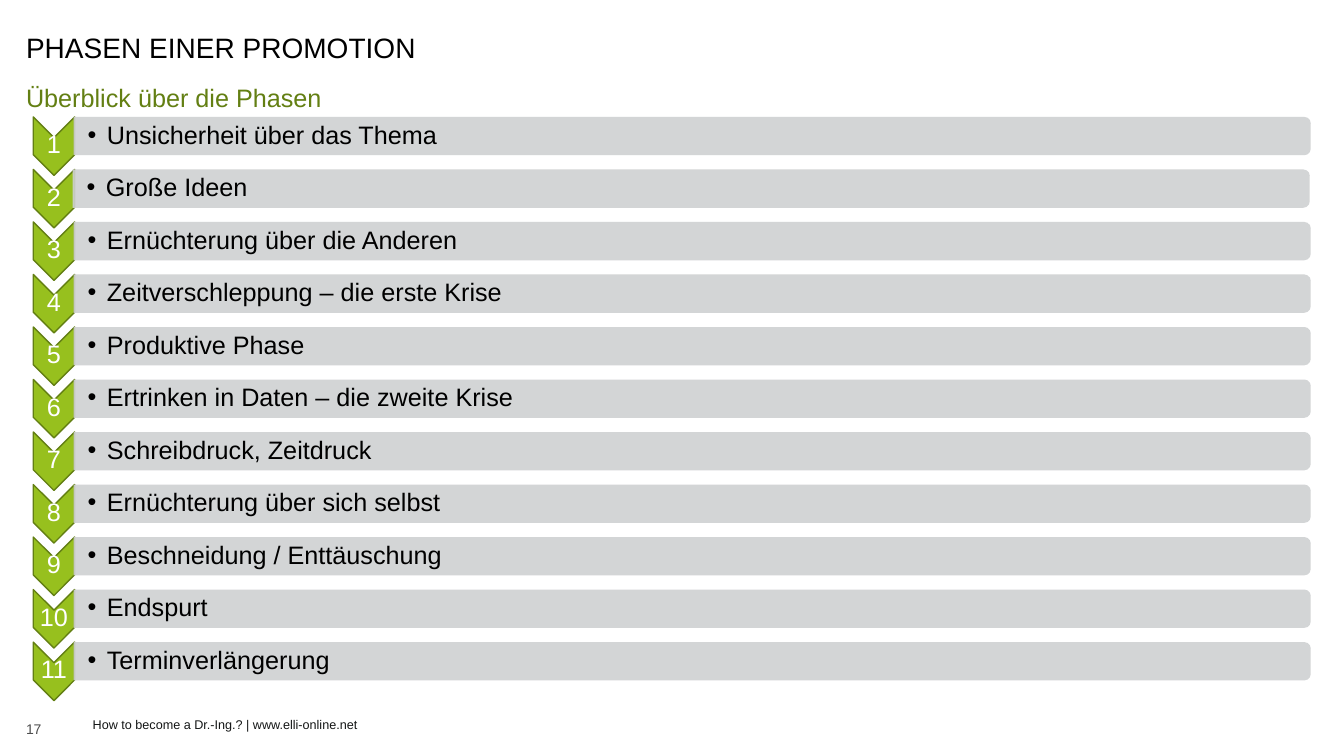
from lxml import etree
from pptx import Presentation
from pptx.dml.color import RGBColor
from pptx.enum.shapes import MSO_SHAPE
from pptx.enum.text import MSO_ANCHOR, PP_ALIGN
from pptx.oxml.ns import qn
from pptx.util import Inches, Pt

CHEVRON = MSO_SHAPE.CHEVRON
BAR = MSO_SHAPE.ROUND_2_SAME_RECTANGLE
TOP, MIDDLE = MSO_ANCHOR.TOP, MSO_ANCHOR.MIDDLE
LEFT, CENTER = PP_ALIGN.LEFT, PP_ALIGN.CENTER

COLORS = {
    "black": "000000", "white": "FFFFFF", "green": "97C01E", "olive": "637F13",
    "silver": "CFD1D2", "gray": "4D4D4D", "ink": "141616",
}
PHASES = [
    "Unsicherheit über das Thema",
    "Große Ideen",
    "Ernüchterung über die Anderen",
    "Zeitverschleppung – die erste Krise",
    "Produktive Phase",
    "Ertrinken in Daten – die zweite Krise",
    "Schreibdruck, Zeitdruck",
    "Ernüchterung über sich selbst",
    "Beschneidung / Enttäuschung",
    "Endspurt",
    "Terminverlängerung",
]
FIRST, LAST = 1.16, 6.37
PITCH = (LAST - FIRST) / (len(PHASES) - 1)


class Page:
    def __init__(self, slide, font):
        self.slide = slide
        self.font = font

    def color(self, name):
        return RGBColor.from_string(COLORS[name])

    def text(self, words, box, size, color, pad=(0.1, 0.05, 0.1, 0.05),
             anchor=MIDDLE, align=LEFT, spacing=1.0, bullet=False):
        frame = self.slide.shapes.add_textbox(*map(Inches, box)).text_frame
        left, top, right, bottom = map(Inches, pad)
        style = {
            "word_wrap": True, "vertical_anchor": anchor,
            "margin_left": left, "margin_top": top,
            "margin_right": right, "margin_bottom": bottom,
        }
        for key, value in style.items():
            setattr(frame, key, value)
        para = frame.paragraphs[0]
        para.text = words
        if bullet:
            self.bullet(para)
        para.alignment = align
        para.line_spacing = spacing
        font = para.runs[0].font
        for key, value in {"name": self.font, "size": Pt(size)}.items():
            setattr(font, key, value)
        font.color.rgb = self.color(color)

    def bullet(self, para):
        props = para._p.get_or_add_pPr()
        props.set("marL", str(Inches(0.19)))
        props.set("indent", str(Inches(-0.19)))
        etree.SubElement(props, qn("a:buFont")).set("typeface", self.font)
        etree.SubElement(props, qn("a:buChar")).set("char", "•")

    def turned(self, kind, box, fill, line=None, alpha=None):
        """Add a shape turned by 90 degrees so that it covers the box."""
        left, top, width, height = box
        shift = (width - height) / 2
        shape = self.slide.shapes.add_shape(
            kind, *map(Inches, (left + shift, top - shift, height, width)))
        shape.rotation = 90
        shape.shadow.inherit = False
        shape.fill.solid()
        shape.fill.fore_color.rgb = self.color(fill)
        if alpha:
            tint = shape.fill._xPr.find(".//" + qn("a:srgbClr"))
            etree.SubElement(tint, qn("a:alpha")).set("val", str(alpha * 1000))
        if line:
            shape.line.color.rgb = self.color(line)
            shape.line.width = Pt(1)
        else:
            shape.line.fill.background()

    def phase(self, number, words):
        top = FIRST + (number - 1) * PITCH
        left = 0.72 if number == 2 else 0.73
        pad = (0.01,) * 4
        self.turned(CHEVRON, (0.33, top, 0.41, 0.58), "green", line="olive")
        self.text(str(number), (0.33, top + 0.2, 0.41, 0.17), 18, "white",
                  pad=pad, align=CENTER, spacing=0.9)
        self.turned(BAR, (left, top, 12.27, 0.38), "silver", alpha=90)
        self.text(words, (left, top + 0.02, 12.25, 0.34), 18, "black",
                  pad=(0.14,) + pad[1:], spacing=0.9, bullet=True)


def main():
    deck = Presentation()
    deck.slide_width, deck.slide_height = Inches(13.33), Inches(7.5)
    page = Page(deck.slides.add_slide(deck.slide_layouts[6]), "Arial")
    page.text("How to become a Dr.-Ing.? | www.elli-online.net",
              (0.92, 7, 7.56, 0.37), 9, "ink", pad=(0,) * 4)
    page.text("Überblick über die Phasen", (0.16, 0.74, 13.02, 0.41), 18,
              "olive", anchor=TOP, spacing=1.1)
    page.text("17", (0.16, 7.11, 1.07, 0.24), 10, "gray")
    page.text("PHASEN EINER PROMOTION", (0.16, 0.22, 10.76, 0.46), 20,
              "black", spacing=1.1)
    for number, words in enumerate(PHASES, 1):
        page.phase(number, words)
    deck.save("out.pptx")


if __name__ == "__main__":
    main()
